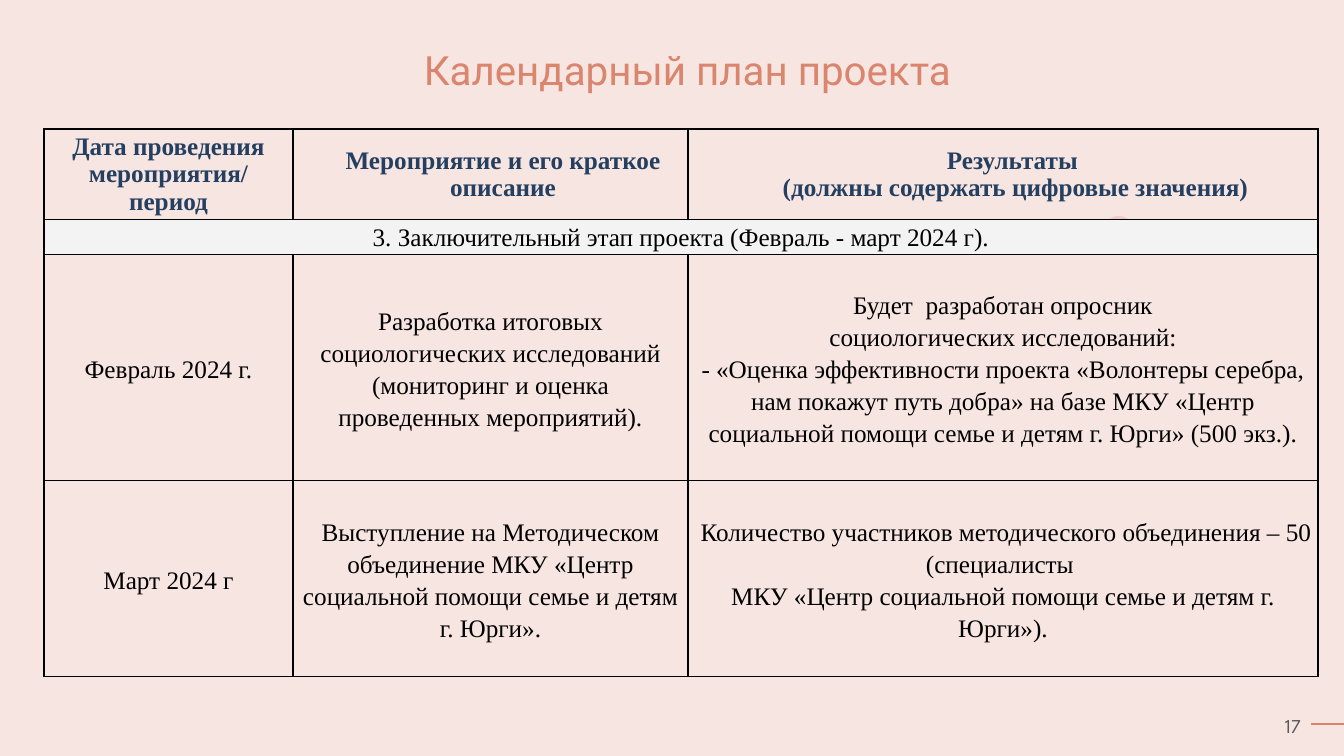
from lxml import etree
from pptx import Presentation
from pptx import util as u
from pptx.dml.color import RGBColor
from pptx.enum import shapes, text
from pptx.oxml import ns

PX = 914400 / 100.8
CORAL = "DA856D"
CENTER, RIGHT = text.PP_ALIGN.CENTER, text.PP_ALIGN.RIGHT


def px(*lengths):
    return [u.Emu(round(length * PX)) for length in lengths]


def write(box, lines, font, size, color, bold=False, **layout):
    """Fill a text frame with one paragraph per line; layout holds paragraph attributes."""
    for index, line in enumerate(lines):
        para = box.paragraphs[0] if index == 0 else box.add_paragraph()
        para.text = line
        for name, value in layout.items():
            setattr(para, name, value)
        for span in para.runs:
            for name, value in {"name": font, "size": u.Pt(size), "bold": bold}.items():
                setattr(span.font, name, value)
            span.font.color.rgb = RGBColor.from_string(color)


deck = Presentation()
deck.slide_width, deck.slide_height = px(1344, 756)
page = deck.slides.add_slide(deck.slide_layouts[5])
page.background.fill.solid()
page.background.fill.fore_color.rgb = RGBColor.from_string("F7E5E1")

# Page number and its dash
dash = page.shapes.add_connector(shapes.MSO_CONNECTOR.STRAIGHT, *px(1344, 724, 1311, 724))
dash.line.color.rgb = RGBColor.from_string(CORAL)
dash.line.width = u.Pt(1.5)
etree.SubElement(dash._element.spPr, ns.qn("a:effectLst"))
number = page.shapes.add_textbox(*px(1227, 709, 84, 35)).text_frame
number.word_wrap = True
write(number, ["17"], "League Spartan", 14, "595959", alignment=RIGHT)

# Title
title = page.shapes.title
title.left, title.top, title.width, title.height = px(108, 47, 1159, 51)
title.text_frame.auto_size = text.MSO_AUTO_SIZE.NONE
title.text_frame.vertical_anchor = text.MSO_ANCHOR.MIDDLE
write(title.text_frame, ["Календарный план проекта"], "Roboto", 28.8, CORAL,
      alignment=CENTER, line_spacing=0.9)

# Dot behind the table
dot = page.shapes.add_shape(shapes.MSO_SHAPE.OVAL, *px(1101, 216, 35, 35))
dot.shadow.inherit = False
dot.fill.solid()
dot.fill.fore_color.rgb = RGBColor.from_string("F0CDC3")
dot.line.fill.background()

# Calendar plan
headers = [
    ["Дата проведения мероприятия/ период"],
    ["Мероприятие и его краткое описание"],
    ["Результаты \v(должны содержать цифровые значения)"],
]
stage = [["3. Заключительный этап проекта (Февраль - март 2024 г)."], [], []]
february = [
    ["Февраль 2024 г."],
    ["Разработка итоговых",
     "социологических исследований (мониторинг и оценка проведенных мероприятий)."],
    ["Будет  разработан опросник",
     "социологических исследований:",
     "- «Оценка эффективности проекта «Волонтеры серебра, нам покажут путь добра» "
     "на базе МКУ «Центр социальной помощи семье и детям г. Юрги» (500 экз.)."],
]
march = [
    ["Март 2024 г"],
    ["Выступление на Методическом объединение МКУ «Центр социальной помощи семье "
     "и детям г. Юрги»."],
    [" Количество участников методического объединения – 50 (специалисты ",
     "МКУ «Центр социальной помощи семье и детям г. Юрги»)."],
]
plan = [headers, stage, february, march]
widths, heights = px(249, 395, 630), px(87, 30, 226, 196)

table = page.shapes.add_table(len(plan), len(widths), *px(44, 129, 1274, 539)).table
table.first_row = table.horz_banding = False
for column, width in zip(table.columns, widths):
    column.width = width
for row, height in zip(table.rows, heights):
    row.height = height
table.cell(1, 0).merge(table.cell(1, 2))

for r, row in enumerate(plan):
    for c, lines in enumerate(row):
        cell = table.cell(r, c)
        side = 3 if r == 0 else 0 if r > 1 and c == 2 else 7
        cell.margin_left, cell.margin_right, cell.margin_top, cell.margin_bottom = px(side, side, 0, 0)
        cell.vertical_anchor = text.MSO_ANCHOR.TOP if r == 1 else text.MSO_ANCHOR.MIDDLE
        if r == 1:
            cell.fill.solid()
            cell.fill.fore_color.rgb = RGBColor.from_string("F3F3F3")
        else:
            cell.fill.background()
        for place, edge in enumerate("LRTB"):
            border = etree.fromstring(
                f'<a:ln{edge} {ns.nsdecls("a")} w="12700"><a:solidFill>'
                f'<a:srgbClr val="000000"/></a:solidFill></a:ln{edge}>')
            cell._tc.tcPr.insert(place, border)
        if r == 0:
            write(cell.text_frame, lines, "Times New Roman", 18, "243F60", True, alignment=CENTER)
            if c > 0:
                cell.text_frame.paragraphs[0]._p.get_or_add_pPr().set("marL", str(px(25)[0]))
        else:
            write(cell.text_frame, lines, "Times New Roman", 18, "000000",
                  alignment=CENTER, line_spacing=1.15)

deck.save("out.pptx")
